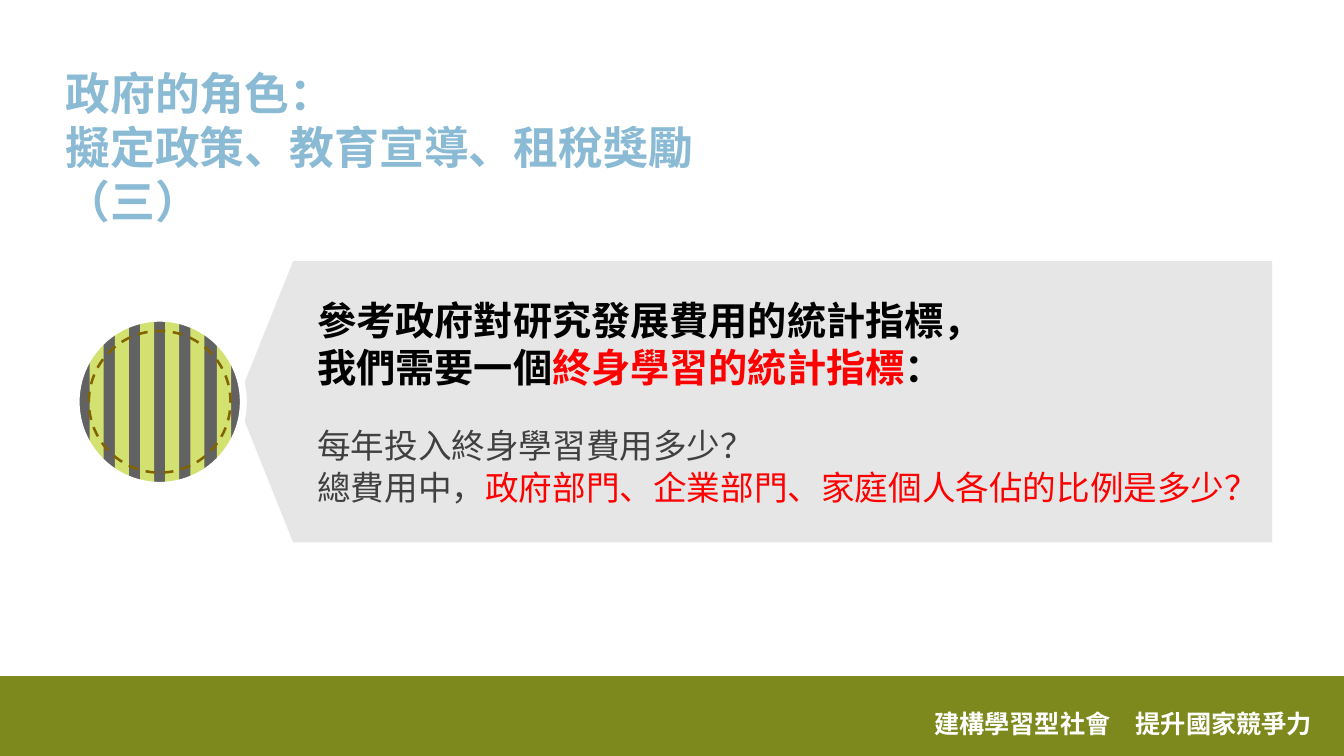
from math import sqrt

from lxml import etree
from pptx import Presentation
from pptx.dml.color import RGBColor
from pptx.enum.dml import MSO_LINE
from pptx.enum.shapes import MSO_SHAPE
from pptx.enum.text import MSO_ANCHOR, PP_ALIGN
from pptx.oxml.ns import qn
from pptx.util import Pt

RECTANGLE, PENTAGON = MSO_SHAPE.RECTANGLE, MSO_SHAPE.PENTAGON
OVAL, DONUT = MSO_SHAPE.OVAL, MSO_SHAPE.DONUT
DASH, TOP, LEFT = MSO_LINE.DASH, MSO_ANCHOR.TOP, PP_ALIGN.LEFT
FONT = "Noto Sans CJK SC"
RED, BLACK, GREY = "FF0000", "000000", "404040"


def paint(shape, colour):
    shape.shadow.inherit = False
    shape.fill.solid()
    shape.fill.fore_color.rgb = RGBColor.from_string(colour)
    shape.line.fill.background()


def write(frame, lines, wrap=True):
    """Each line: size, bold, line height, space before, [(text, colour), ...]."""
    frame.word_wrap = wrap
    frame.vertical_anchor = TOP
    for i, (size, bold, height, before, parts) in enumerate(lines):
        line = frame.add_paragraph() if i else frame.paragraphs[0]
        layout = {"alignment": LEFT, "line_spacing": Pt(height), "space_before": Pt(before)}
        for key, value in layout.items():
            setattr(line, key, value)
        for text, colour in parts:
            # A vertical tab in the text stands for a line break
            for j, piece in enumerate(text.split("\v")):
                if j:
                    line.add_line_break()
                run = line.add_run()
                run.text = piece
                for key, value in {"name": FONT, "size": Pt(size), "bold": bold}.items():
                    setattr(run.font, key, value)
                run.font.color.rgb = RGBColor.from_string(colour)
                etree.SubElement(run.font._element, qn("a:ea"), typeface=FONT)


prs = Presentation()
prs.slide_width, prs.slide_height = Pt(960), Pt(540)
slide = prs.slides.add_slide(prs.slide_layouts[5])
shapes = slide.shapes

# Title
title = shapes.title
title.left, title.top, title.width, title.height = Pt(39.6), Pt(43), Pt(527), Pt(124)
write(title.text_frame, [
    (32, True, 38.6, 0, [("政府的角色：\v擬定政策、教育宣導、租稅獎勵（三）", "8ABAD4")]),
])

# Footer band with slogan
band = shapes.add_shape(RECTANGLE, 0, Pt(483), Pt(960), Pt(57))
paint(band, "7D891D")
slogan = shapes.add_textbox(Pt(660.2), Pt(502), Pt(287), Pt(29))
write(slogan.text_frame, [(18, True, 22, 0, [("建構學習型社會　提升國家競爭力", "FFFFFF")])], wrap=False)

# Panel pointing left
panel = shapes.add_shape(PENTAGON, Pt(169.2), Pt(186.5), Pt(739.4), Pt(200.9))
panel.rotation = 180
panel.adjustments[0] = 0.2
paint(panel, "E6E6E6")

# Indicator text
indicator = shapes.add_textbox(Pt(219.6), Pt(209), Pt(690), Pt(160))
write(indicator.text_frame, [
    (28, True, 33, 0, [("參考政府對研究發展費用的統計指標，", BLACK)]),
    (28, True, 33, 0, [("我們需要一個", BLACK), ("終身學習的統計指標", RED), ("：", BLACK)]),
    (24, False, 30, 23.5, [("每年投入終身學習費用多少？", GREY)]),
    (24, False, 30, 0, [("總費用中，", GREY),
                        ("政府部門、企業部門、家庭個人各佔的比例是多少？", RED)]),
])

# Striped badge: disc
centre_x, centre_y, radius = 114.1, 287, 59.5
disc = shapes.add_shape(OVAL, Pt(centre_x - radius), Pt(centre_y - radius),
                        Pt(2 * radius), Pt(2 * radius))
paint(disc, "626262")

# Six stripes cut to the disc's outline
stripe_width, stripe_pitch, steps = 10, 18.24, 8
for n in range(6):
    start = (n - 2.5) * stripe_pitch - stripe_width / 2
    offsets = [start + stripe_width * k / steps for k in range(steps + 1)]
    upper = [(centre_x + dx, centre_y - sqrt(radius ** 2 - dx ** 2)) for dx in offsets]
    lower = [(x, 2 * centre_y - y) for x, y in reversed(upper)]
    outline = upper + lower
    builder = shapes.build_freeform(*outline[0], scale=Pt(1))
    builder.add_line_segments(outline[1:], close=True)
    paint(builder.convert_to_shape(), "D3E171")

# White ring around the disc
ring_radius = 62.2
ring = shapes.add_shape(DONUT, Pt(centre_x - ring_radius), Pt(centre_y - ring_radius),
                        Pt(2 * ring_radius), Pt(2 * ring_radius))
ring.adjustments[0] = 0.04
paint(ring, "FFFFFF")

# Dashed stitching
stitch_radius = 50.6
stitching = shapes.add_shape(OVAL, Pt(centre_x - stitch_radius), Pt(centre_y - stitch_radius),
                             Pt(2 * stitch_radius), Pt(2 * stitch_radius))
stitching.shadow.inherit = False
stitching.fill.background()
stitching.line.color.rgb = RGBColor.from_string("816301")
stitching.line.width = Pt(1.8)
stitching.line.dash_style = DASH

prs.save("out.pptx")
